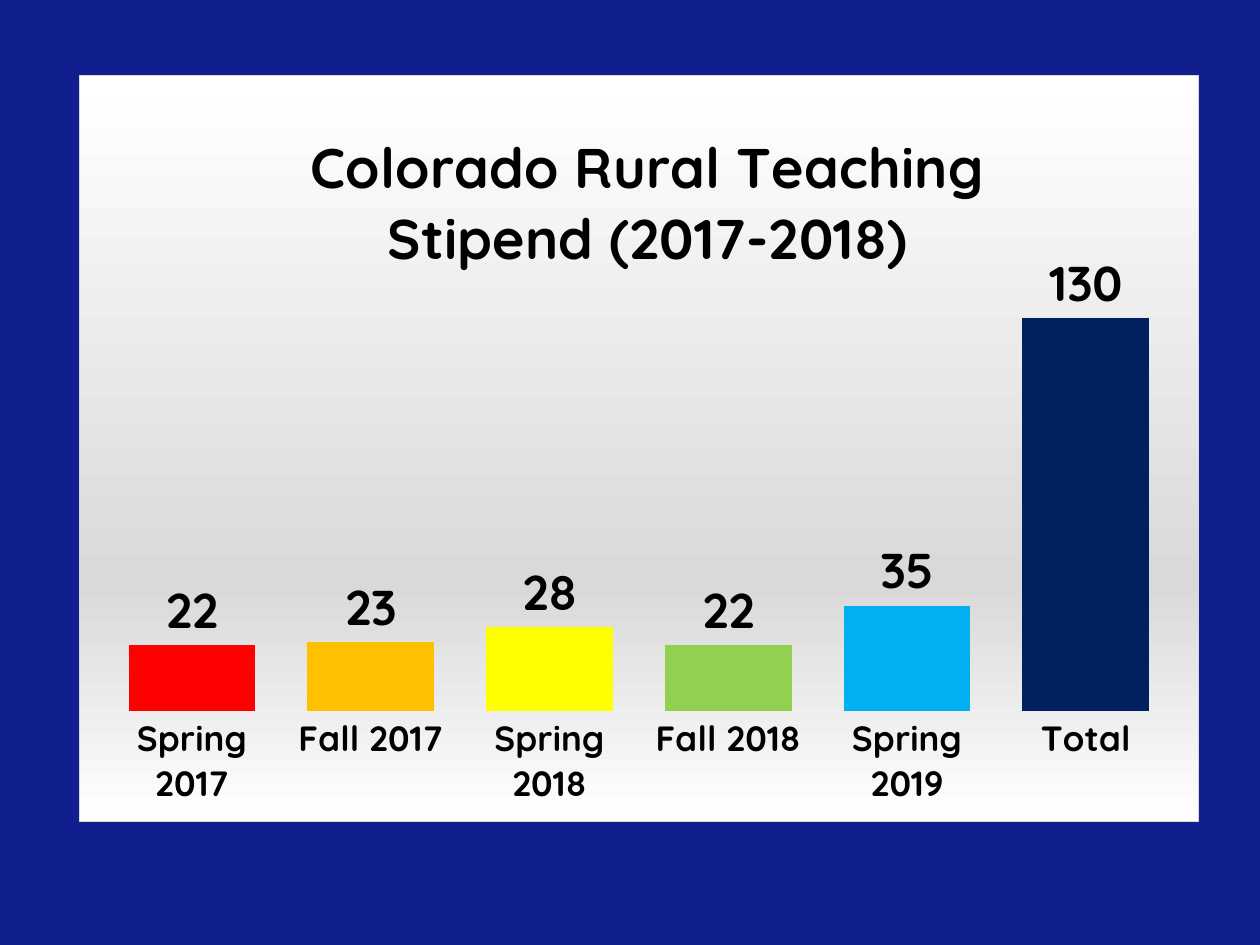
"""Build a slide with a column chart of Colorado rural teaching stipends."""
from typing import NamedTuple

from lxml.etree import _Element as Element
from pptx import Presentation
from pptx.chart.chart import Chart
from pptx.chart.data import CategoryChartData as ChartData
from pptx.dml.color import RGBColor
from pptx.enum.chart import XL_CHART_TYPE as ChartType
from pptx.enum.chart import XL_LABEL_POSITION as LabelPosition
from pptx.enum.chart import XL_TICK_MARK as TickMark
from pptx.oxml import parse_xml
from pptx.oxml.ns import nsdecls, qn
from pptx.text.text import Font
from pptx.util import Emu, Pt


class Area(NamedTuple):
    left: int
    top: int
    width: int
    height: int


class Bar(NamedTuple):
    term: str
    count: int
    color: str


SCALE = 914400 / 126
FONT = "Quicksand"
TITLE = "Colorado Rural Teaching Stipend (2017-2018)"
COLORS = {
    "page": "101E8E", "text": "000000", "light": "FFFFFF", "shade": "D9D9D9",
    "red": "FF0000", "amber": "FFC000", "yellow": "FFFF00",
    "green": "92D050", "sky": "00B0F0", "navy": "002060",
}
CHART = Area(79, 75, 1120, 747)
PLOT = Area(102, 288, 1074, 424)
HEADING = Area(300, 115, 674, 142)
BARS = [
    Bar("Spring 2017", 22, "red"),
    Bar("Fall 2017", 23, "amber"),
    Bar("Spring 2018", 28, "yellow"),
    Bar("Fall 2018", 22, "green"),
    Bar("Spring 2019", 35, "sky"),
    Bar("Total", 130, "navy"),
]


def px(length: int) -> Emu:
    """Turn pixels into EMU."""
    return Emu(round(length * SCALE))


def rgb(name: str) -> RGBColor:
    """Look up a named colour."""
    return RGBColor.from_string(COLORS[name])


def style_font(font: Font, size: int) -> None:
    """Apply the bold chart lettering at one size."""
    font.name, font.size, font.bold = FONT, Pt(size), True
    font.color.rgb = rgb("text")


def set_layout(parent: Element, area: Area, position: int, inner: bool) -> None:
    """Place a chart part at a fixed area of the chart."""
    for old in parent.findall(qn("c:layout")):
        parent.remove(old)
    values = {
        "x": (area.left - CHART.left) / CHART.width,
        "y": (area.top - CHART.top) / CHART.height,
    }
    if inner:
        values |= {"w": area.width / CHART.width, "h": area.height / CHART.height}
    target = '<c:layoutTarget val="inner"/>' if inner else ""
    modes = "".join(f'<c:{key}Mode val="edge"/>' for key in ("x", "y"))
    sizes = "".join(f'<c:{key} val="{value:.4f}"/>' for key, value in values.items())
    parent.insert(position, parse_xml(
        f'<c:layout {nsdecls("c")}><c:manualLayout>{target}{modes}{sizes}'
        "</c:manualLayout></c:layout>"))


def fill_chart(chart: Chart) -> None:
    """Give the chart its vertical gradient and thin border."""
    stops = "".join(
        f'<a:gs pos="{percent * 1000}"><a:srgbClr val="{COLORS[name]}"/></a:gs>'
        for percent, name in ((0, "light"), (68, "shade"), (100, "light")))
    chart.element.find(qn("c:chart")).addnext(parse_xml(
        f'<c:spPr {nsdecls("c", "a")}><a:gradFill><a:gsLst>{stops}</a:gsLst>'
        f'<a:lin ang="5400000" scaled="0"/></a:gradFill><a:ln w="{Pt(0.75)}">'
        f'<a:solidFill><a:srgbClr val="{COLORS["shade"]}"/></a:solidFill>'
        "</a:ln></c:spPr>"))


def add_title(chart: Chart) -> None:
    """Write the chart title."""
    title = chart.chart_title
    para = title.text_frame.paragraphs[0]
    span = para.add_run()
    span.text = TITLE
    style_font(span.font, 32)
    set_layout(title.element if hasattr(title, "element") else title._element,
               HEADING, 1, inner=False)


def style_axes(chart: Chart) -> None:
    """Show only the category names."""
    terms, counts = chart.category_axis, chart.value_axis
    terms.major_tick_mark = terms.minor_tick_mark = TickMark.NONE
    terms.format.line.fill.background()
    style_font(terms.tick_labels.font, 20)
    counts.visible = counts.has_major_gridlines = False
    counts.minimum_scale, counts.maximum_scale = 0, 140


def style_bars(chart: Chart) -> None:
    """Colour each bar and label it with its value."""
    plot = chart.plots[0]
    plot.gap_width, plot.vary_by_categories = 41, False
    series = plot.series[0]
    for index, bar in enumerate(BARS):
        fill = series.points[index].format.fill
        fill.solid()
        fill.fore_color.rgb = rgb(bar.color)
    labels = series.data_labels
    labels.show_value, labels.position = True, LabelPosition.OUTSIDE_END
    style_font(labels.font, 28)


def main() -> None:
    """Build and save the deck."""
    deck = Presentation()
    deck.slide_width, deck.slide_height = px(1260), px(945)
    page = deck.slides.add_slide(deck.slide_layouts[6])
    page.background.fill.solid()
    page.background.fill.fore_color.rgb = rgb("page")

    data = ChartData()
    data.categories = [bar.term for bar in BARS]
    data.add_series("Series 1", [bar.count for bar in BARS])
    chart = page.shapes.add_chart(
        ChartType.COLUMN_CLUSTERED, *map(px, CHART), data).chart
    chart.has_legend = False
    style_font(chart.font, 10)
    fill_chart(chart)
    add_title(chart)
    style_axes(chart)
    style_bars(chart)
    set_layout(chart.element.find(".//" + qn("c:plotArea")), PLOT, 0, inner=True)
    deck.save("out.pptx")


if __name__ == "__main__":
    main()
